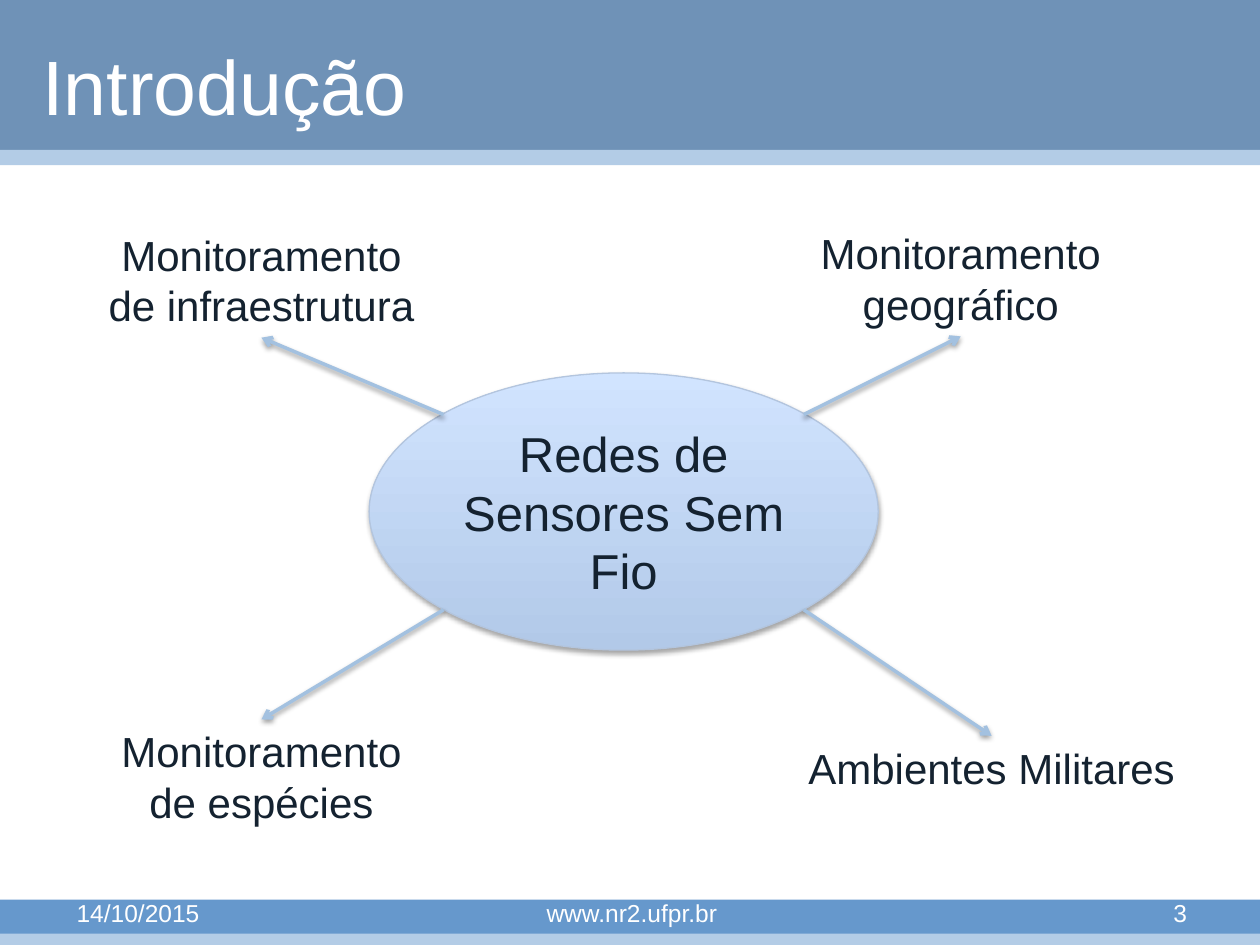
from lxml import etree
from pptx import Presentation
from pptx.dml.color import RGBColor
from pptx.enum.shapes import MSO_CONNECTOR, MSO_SHAPE
from pptx.enum.text import MSO_ANCHOR, MSO_AUTO_SIZE, PP_ALIGN
from pptx.oxml import parse_xml
from pptx.oxml.ns import nsdecls, qn
from pptx.util import Inches, Pt

WHITE, INK, ARROW, PALE = "FFFFFF", "142230", "A3C1E0", "B3CCE6"
TOP, BOTTOM = 0, 2


def rgb(value):
    return RGBColor.from_string(value)


def write(shape, lines, size, color, align):
    frame = shape.text_frame
    frame.text = "\n".join(lines)
    for paragraph in frame.paragraphs:
        paragraph.alignment = align
        paragraph.font.name = "Arial"
        paragraph.font.size = Pt(size)
        paragraph.font.color.rgb = rgb(color)
    return frame


prs = Presentation()
prs.slide_width, prs.slide_height = Inches(10), Inches(7.5)
slide = prs.slides.add_slide(prs.slide_layouts[6])
shapes = slide.shapes

# Header and footer bands: top, height, colour, opacity in percent
for top, height, color, opacity in [
    (0, 1.31, "336599", 70),
    (1.19, 0.12, PALE, 100),
    (7.14, 0.28, "6698CC", 100),
    (7.41, 0.09, PALE, 100),
]:
    band = shapes.add_shape(MSO_SHAPE.RECTANGLE, 0, Inches(top), Inches(10), Inches(height))
    band.shadow.inherit = False
    band.fill.solid()
    band.fill.fore_color.rgb = rgb(color)
    band.line.fill.background()
    if opacity < 100:
        tint = band._element.spPr.find(qn("a:solidFill"))[0]
        etree.SubElement(tint, qn("a:alpha")).set("val", str(opacity * 1000))

# Title
title = shapes.add_textbox(Inches(0.24), Inches(0.28), Inches(9.33), Inches(0.79))
title_frame = write(title, ["Introdução"], 44, WHITE, PP_ALIGN.LEFT)
title_frame.word_wrap = True
title_frame.vertical_anchor = MSO_ANCHOR.MIDDLE

# Footer: date, site and slide number
for text, left, width, align in [
    ("14/10/2015", 0.51, 2.34, PP_ALIGN.LEFT),
    ("www.nr2.ufpr.br", 3.43, 3.17, PP_ALIGN.CENTER),
    ("3", 7.18, 2.34, PP_ALIGN.RIGHT),
]:
    footer = shapes.add_textbox(Inches(left), Inches(7.08), Inches(width), Inches(0.35))
    write(footer, [text], 14, WHITE, align).word_wrap = True

# Central topic
network = shapes.add_shape(MSO_SHAPE.OVAL, Inches(2.93), Inches(2.96), Inches(4.04), Inches(2.2))
network.fill.gradient()
network.fill.gradient_angle = 90
for stop, color in zip(network.fill.gradient_stops, ["B2C9E8", "D1E4FF"]):
    stop.color.rgb = rgb(color)
network.line.color.rgb = rgb("B3C5DE")
network.line.width = Pt(0.75)
network_frame = write(network, ["Redes de Sensores Sem Fio"], 28, INK, PP_ALIGN.CENTER)
network_frame.word_wrap = True
network_frame.vertical_anchor = MSO_ANCHOR.MIDDLE
shadowed = [(network, 1.8, 35)]

# Applications, each with an arrow from the central topic to its label
for lines, left, top, width, height, start, side in [
    (["Monitoramento", "de infraestrutura"], 0.75, 1.77, 2.65, 0.91, (3.52, 3.29), BOTTOM),
    (["Monitoramento", "geográfico"], 6.37, 1.76, 2.51, 0.91, (6.38, 3.29), BOTTOM),
    (["Monitoramento", "de espécies"], 0.85, 5.71, 2.45, 0.91, (3.52, 4.84), TOP),
    (["Ambientes Militares"], 6.3, 5.84, 3.14, 0.5, (6.38, 4.84), TOP),
]:
    label = shapes.add_textbox(Inches(left), Inches(top), Inches(width), Inches(height))
    label_frame = write(label, lines, 24, INK, PP_ALIGN.CENTER)
    label_frame.word_wrap = False
    label_frame.auto_size = MSO_AUTO_SIZE.SHAPE_TO_FIT_TEXT

    x, y = Inches(start[0]), Inches(start[1])
    arrow = shapes.add_connector(MSO_CONNECTOR.STRAIGHT, x, y, x, y)
    arrow.end_connect(label, side)
    arrow.line.color.rgb = rgb(ARROW)
    arrow.line.width = Pt(2)
    etree.SubElement(arrow.line._get_or_add_ln(), qn("a:tailEnd")).set("type", "arrow")
    shadowed.append((arrow, 1.6, 38))

# Soft shadows below the topic and the arrows
for shape, distance, opacity in shadowed:
    shape._element.spPr.append(parse_xml(
        f'<a:effectLst {nsdecls("a")}>'
        f'<a:outerShdw blurRad="{Pt(3.1)}" dist="{Pt(distance)}" dir="5400000" rotWithShape="0">'
        f'<a:srgbClr val="000000"><a:alpha val="{opacity * 1000}"/></a:srgbClr>'
        '</a:outerShdw></a:effectLst>'
    ))

prs.save("out.pptx")
